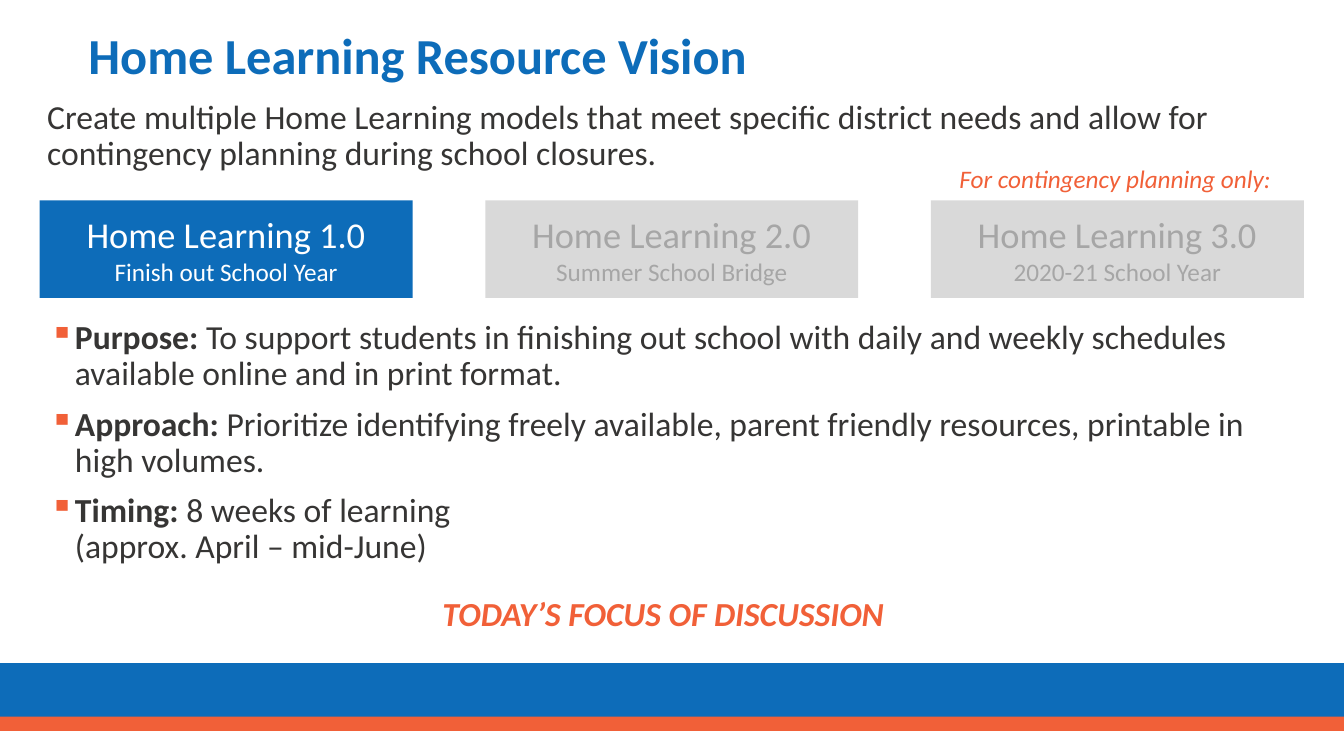
import pptx
import pptx.dml.color
import pptx.enum.shapes
import pptx.enum.text
import pptx.oxml
import pptx.oxml.ns
import pptx.util
from dataclasses import dataclass

Cm = pptx.util.Cm
ALIGN = pptx.enum.text.PP_ALIGN
ANCHOR = pptx.enum.text.MSO_ANCHOR
FIT = pptx.enum.text.MSO_AUTO_SIZE


@dataclass(frozen=True)
class Theme:
    font: str = "Calibri"
    blue: str = "0D6CB9"
    orange: str = "F16038"
    ink: str = "363534"
    white: str = "FFFFFF"
    pale: str = "D9D9D9"
    muted: str = "A6A6A6"
    title: int = 36
    heading: int = 26
    body: int = 24
    small: int = 18


def set_all(target, values):
    for name, value in values.items():
        setattr(target, name, value)


class SlideBuilder:
    def __init__(self, slide, theme):
        self.slide = slide
        self.theme = theme

    def span(self, para, text, size, color, **style):
        span = para.add_run()
        span.text = text
        set_all(span.font, {"name": self.theme.font,
                            "size": pptx.util.Pt(size), **style})
        span.font.color.rgb = pptx.dml.color.RGBColor.from_string(color)

    def rectangle(self, left, top, width, height, color):
        box = self.slide.shapes.add_shape(
            pptx.enum.shapes.MSO_SHAPE.RECTANGLE,
            Cm(left), Cm(top), Cm(width), Cm(height))
        box.shadow.inherit = False
        box.fill.solid()
        box.fill.fore_color.rgb = pptx.dml.color.RGBColor.from_string(color)
        box.line.fill.background()
        return box

    def card(self, place, heading, caption, fill, color):
        frame = self.rectangle(*place, fill).text_frame
        set_all(frame, {"word_wrap": True, "vertical_anchor": ANCHOR.MIDDLE})
        lines = ((frame.paragraphs[0], heading, self.theme.heading),
                 (frame.add_paragraph(), caption, self.theme.small))
        for para, text, size in lines:
            para.alignment = ALIGN.CENTER
            self.span(para, text, size, color)

    def frame(self, left, top, width, height, **values):
        box = self.slide.shapes.add_textbox(
            Cm(left), Cm(top), Cm(width), Cm(height))
        set_all(box.text_frame, {"word_wrap": True, **values})
        return box.text_frame

    def text(self, place, text, size, color, layout=None, para_format=None, **style):
        para = self.frame(*place, **(layout or {})).paragraphs[0]
        set_all(para, para_format or {})
        self.span(para, text, size, color, **style)

    def bullets(self, place, items):
        frame = self.frame(*place)
        for index, (label, lines) in enumerate(items):
            para = frame.add_paragraph() if index else frame.paragraphs[0]
            self.add_bullet(para)
            set_all(para, {"line_spacing": 0.9,
                           "space_before": pptx.util.Pt(10 if index else 0)})
            self.span(para, label + " ", self.theme.body, self.theme.ink, bold=True)
            for number, line in enumerate(lines):
                if number:
                    para.add_line_break()
                self.span(para, line, self.theme.body, self.theme.ink)

    def add_bullet(self, para):
        properties = para._p.get_or_add_pPr()
        indent = Cm(0.64)
        properties.set("marL", str(indent))
        properties.set("indent", str(-indent))
        namespace = pptx.oxml.ns.nsdecls("a")
        for markup in (
            f'<a:buClr {namespace}><a:srgbClr val="{self.theme.orange}"/></a:buClr>',
            f'<a:buChar {namespace} char="▪"/>',
        ):
            properties.append(pptx.oxml.parse_xml(markup))


def main():
    deck = pptx.Presentation()
    set_all(deck, {"slide_width": Cm(33.87), "slide_height": Cm(19.05)})
    theme = Theme()
    page = SlideBuilder(deck.slides.add_slide(deck.slide_layouts[6]), theme)

    # Footer bands
    page.rectangle(0, 16.71, 33.87, 1.47, theme.blue)
    page.rectangle(0, 18.06, 33.87, 0.36, theme.orange)

    # Title and introduction
    page.text((1.98, 0.43, 30.89, 2.08), "Home Learning Resource Vision",
              theme.title, theme.blue, {"vertical_anchor": ANCHOR.MIDDLE},
              {"line_spacing": 0.9}, bold=True)
    page.text((0.94, 2.41, 31.93, 2.62),
              "Create multiple Home Learning models that meet specific district "
              "needs and allow for contingency planning during school closures.",
              theme.body, theme.ink, para_format={"line_spacing": 0.9})

    # Model cards, the first one highlighted
    captions = ("Finish out School Year", "Summer School Bridge",
                "2020-21 School Year")
    for index, caption in enumerate(captions):
        fill, color = ((theme.pale, theme.muted) if index
                       else (theme.blue, theme.white))
        page.card((1 + 11.23 * index, 5.05, 9.4, 2.46),
                  f"Home Learning {index + 1}.0", caption, fill, color)

    # Details of the first model
    page.bullets((1, 7.95, 31.93, 10.36), (
        ("Purpose:", ("To support students in finishing out school with daily "
                      "and weekly schedules available online and in print format.",)),
        ("Approach:", ("Prioritize identifying freely available, parent friendly "
                       "resources, printable in high volumes.",)),
        ("Timing:", ("8 weeks of learning ", "(approx. April – mid-June)")),
    ))

    # Callouts
    callout = {"word_wrap": False, "auto_size": FIT.SHAPE_TO_FIT_TEXT}
    page.text((10.85, 14.81, 11.73, 1.27), "TODAY’S FOCUS OF DISCUSSION",
              theme.body, theme.orange, callout, {"alignment": ALIGN.CENTER},
              bold=True, italic=True)
    page.text((23.93, 3.99, 8.43, 1.02), "For contingency planning only:",
              theme.small, theme.orange, callout, italic=True)

    deck.save("out.pptx")


if __name__ == "__main__":
    main()
